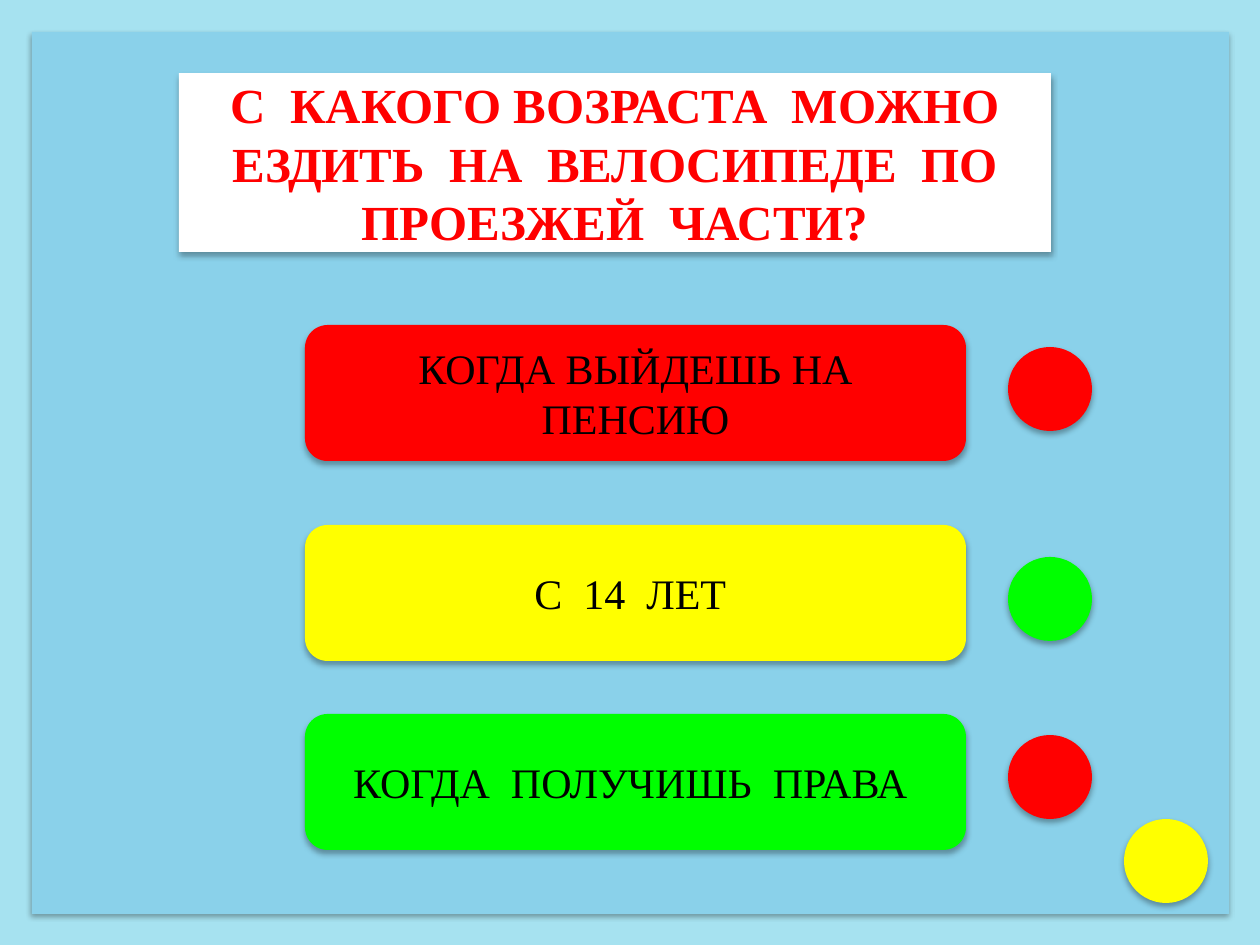
from lxml.etree import SubElement
from pptx import Presentation
from pptx.dml.color import RGBColor
from pptx.enum.shapes import MSO_SHAPE as Shape
from pptx.enum.text import MSO_ANCHOR as Anchor, MSO_AUTO_SIZE as AutoSize, PP_ALIGN as Align
from pptx.oxml.ns import qn
from pptx.util import Pt

EMU_PER_PX = 914400 / 126
TITLE_ONLY = 5
FONT = "Times New Roman"

BLACK = RGBColor(0x00, 0x00, 0x00)
WHITE = RGBColor(0xFF, 0xFF, 0xFF)
RED = RGBColor(0xFF, 0x00, 0x00)
YELLOW = RGBColor(0xFF, 0xFF, 0x00)
GREEN = RGBColor(0x00, 0xFF, 0x00)
FRAME_BLUE = RGBColor(0xA6, 0xE2, 0xF0)
PANEL_BLUE = RGBColor(0x8A, 0xD1, 0xEA)

# Answer text, card colour, card top, light colour, light top
ANSWERS = [
    ("КОГДА ВЫЙДЕШЬ НА ПЕНСИЮ", RED, 325, RED, 347),
    ("С  14  ЛЕТ ", YELLOW, 525, GREEN, 557),
    ("КОГДА  ПОЛУЧИШЬ  ПРАВА ", GREEN, 714, RED, 735),
]
LIGHT_SIZE = 84


def px(length):
    return round(length * EMU_PER_PX)


def write(shape, text, size=24, color=BLACK, bold=False):
    frame = shape.text_frame
    frame.auto_size = AutoSize.NONE
    frame.word_wrap = True
    frame.vertical_anchor = Anchor.MIDDLE
    para = frame.paragraphs[0]
    para.alignment = Align.CENTER
    span = para.add_run()
    span.text = text
    font = span.font
    font.name, font.size, font.bold = FONT, Pt(size), bold
    font.color.rgb = color


class QuizPage:
    """Holds the current slide and gives its shapes one flat, shadowed style."""

    def __init__(self, deck):
        self.page = deck.slides.add_slide(deck.slide_layouts[TITLE_ONLY])

    def style(self, shape, fill):
        shape.fill.solid()
        shape.fill.fore_color.rgb = fill
        shape.line.fill.background()
        shape.shadow.inherit = False
        effects = shape._element.spPr.find(qn("a:effectLst"))
        shadow = SubElement(effects, qn("a:outerShdw"), blurRad=str(Pt(3.5)),
                            dist=str(Pt(2.2)), dir="5400000", rotWithShape="0")
        tint = SubElement(shadow, qn("a:srgbClr"), val=str(BLACK))
        SubElement(tint, qn("a:alpha"), val="32000")

    def box(self, kind, left, top, width, height, fill):
        shape = self.page.shapes.add_shape(kind, px(left), px(top), px(width), px(height))
        self.style(shape, fill)
        return shape

    def panel(self, left, top, width, height, fill):
        self.box(Shape.RECTANGLE, left, top, width, height, fill)

    def title(self, text, left, top, width, height):
        title = self.page.shapes.title
        title.left, title.top = px(left), px(top)
        title.width, title.height = px(width), px(height)
        self.style(title, WHITE)
        write(title, text, size=28, color=RED, bold=True)
        # Bring the title in front of the panels drawn so far
        self.page.shapes._spTree.append(title._element)

    def card(self, text, top, fill):
        write(self.box(Shape.ROUNDED_RECTANGLE, 305, top, 661, 136, fill), text)

    def light(self, left, top, fill):
        self.box(Shape.OVAL, left, top, LIGHT_SIZE, LIGHT_SIZE, fill)


def main():
    deck = Presentation()
    deck.slide_width, deck.slide_height = px(1260), px(945)
    quiz = QuizPage(deck)
    quiz.panel(0, 0, 1260, 945, FRAME_BLUE)
    quiz.panel(32, 32, 1197, 882, PANEL_BLUE)
    quiz.title("С  КАКОГО ВОЗРАСТА  МОЖНО ЕЗДИТЬ  НА  ВЕЛОСИПЕДЕ  ПО ПРОЕЗЖЕЙ  ЧАСТИ?",
               179, 73, 872, 179)
    for text, card_fill, card_top, _, _ in ANSWERS:
        quiz.card(text, card_top, card_fill)
    for _, _, _, light_fill, light_top in ANSWERS:
        quiz.light(1008, light_top, light_fill)
    quiz.light(1124, 819, YELLOW)
    deck.save("out.pptx")


if __name__ == "__main__":
    main()
